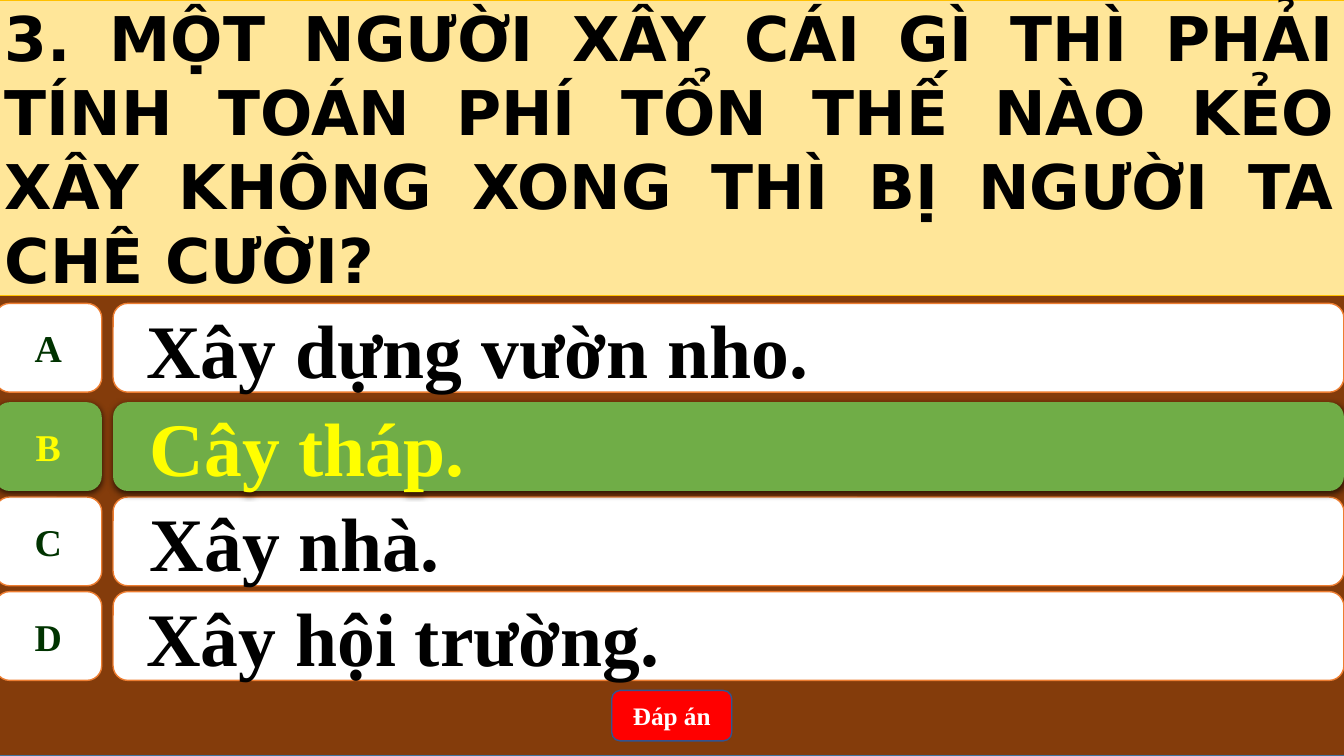
from dataclasses import dataclass

import pptx
import pptx.dml.color
import pptx.enum.shapes
import pptx.enum.text
import pptx.oxml
import pptx.util

Pt = pptx.util.Pt
Shape = pptx.enum.shapes.MSO_SHAPE
Align = pptx.enum.text.PP_ALIGN


@dataclass(frozen=True)
class Theme:
    backdrop: str = "843C0B"
    backdrop_line: str = "43739E"
    banner: str = "FFE699"
    banner_line: str = "FFC000"
    card: str = "FFFFFF"
    card_line: str = "ED7D31"
    correct: str = "70AD47"
    correct_text: str = "FFFF00"
    letter: str = "003300"
    ink: str = "000000"
    button: str = "FF0000"
    button_line: str = "325491"
    button_text: str = "FFFFFF"
    question_font: str = "DejaVu Sans"
    answer_font: str = "Times New Roman"
    question_size: float = 44
    answer_size: float = 54
    letter_size: float = 27
    button_size: float = 18


THEME = Theme()
LEFT = -3.6
WIDTH = 964.1
ROW_HEIGHT = 63.4
QUESTION = (
    "3. MỘT NGƯỜI XÂY CÁI GÌ THÌ PHẢI TÍNH TOÁN PHÍ TỔN THẾ NÀO KẺO "
    "XÂY KHÔNG XONG THÌ BỊ NGƯỜI TA CHÊ CƯỜI?"
)
ANSWERS = [
    ("A", "Xây dựng vườn nho.", 216.7, 13.5, False),
    ("C", "Xây nhà.", 355, 16, False),
    ("D", "Xây hội trường.", 422.6, 13.5, False),
    ("B", "Cây tháp.", 287.3, 16, True),
]


def rgb(value):
    return pptx.dml.color.RGBColor.from_string(value)


def add_box(slide, kind, left, top, width, height, fill, line=None, line_width=1):
    shape = slide.shapes.add_shape(kind, Pt(left), Pt(top), Pt(width), Pt(height))
    shape.shadow.inherit = False
    shape.fill.solid()
    shape.fill.fore_color.rgb = rgb(fill)
    if line:
        shape.line.color.rgb = rgb(line)
        shape.line.width = Pt(line_width)
    else:
        shape.line.fill.background()
    return shape


def write_text(shape, text, *, size, color, font=THEME.answer_font,
               align=Align.CENTER, indent=0, wrap=True):
    frame = shape.text_frame
    frame.word_wrap = wrap
    frame.vertical_anchor = pptx.enum.text.MSO_ANCHOR.MIDDLE
    paragraph = frame.paragraphs[0]
    paragraph.alignment = align
    if indent:
        paragraph._p.get_or_add_pPr().set("marL", str(Pt(indent)))
    run = paragraph.add_run()
    run.text = text
    run.font.name = font
    run.font.size = Pt(size)
    run.font.bold = True
    run.font.color.rgb = rgb(color)


def add_drop_shadow(shape):
    effects = shape._element.spPr.find(pptx.oxml.ns.qn("a:effectLst"))
    effects.append(pptx.oxml.parse_xml(
        f'<a:outerShdw {pptx.oxml.ns.nsdecls("a")} blurRad="{Pt(4.5)}" '
        f'dist="{Pt(1.5)}" dir="5400000" algn="ctr" rotWithShape="0">'
        f'<a:srgbClr val="{THEME.ink}"><a:alpha val="63000"/></a:srgbClr>'
        '</a:outerShdw>'
    ))


def add_answer(slide, letter, answer, top, indent, correct):
    fill = THEME.correct if correct else THEME.card
    line = None if correct else THEME.card_line
    card = add_box(slide, Shape.ROUNDED_RECTANGLE, 80.8, top, 879.2, ROW_HEIGHT, fill, line)
    tag = add_box(slide, Shape.FLOWCHART_ALTERNATE_PROCESS, LEFT, top, 76.3,
                  ROW_HEIGHT, fill, line)
    write_text(card, answer, size=THEME.answer_size, align=Align.LEFT, indent=indent,
               color=THEME.correct_text if correct else THEME.ink)
    write_text(tag, letter, size=THEME.letter_size, wrap=False,
               color=THEME.correct_text if correct else THEME.letter)
    if correct:
        add_drop_shadow(card)
        add_drop_shadow(tag)


def main():
    presentation = pptx.Presentation()
    presentation.slide_width = Pt(960)
    presentation.slide_height = Pt(540)
    slide = presentation.slides.add_slide(presentation.slide_layouts[6])

    add_box(slide, Shape.RECTANGLE, LEFT, 0, WIDTH, 540, THEME.backdrop, THEME.backdrop_line)
    banner = add_box(slide, Shape.RECTANGLE, LEFT, 0, WIDTH, 211,
                     THEME.banner, THEME.banner_line, 0.5)
    write_text(banner, QUESTION, size=THEME.question_size, color=THEME.ink,
               font=THEME.question_font, align=Align.JUSTIFY)
    for answer in ANSWERS:
        add_answer(slide, *answer)
    button = add_box(slide, Shape.ROUNDED_RECTANGLE, 437, 493.2, 85.7, 36,
                     THEME.button, THEME.button_line)
    write_text(button, "Đáp án", size=THEME.button_size, color=THEME.button_text)

    presentation.save("out.pptx")


if __name__ == "__main__":
    main()
